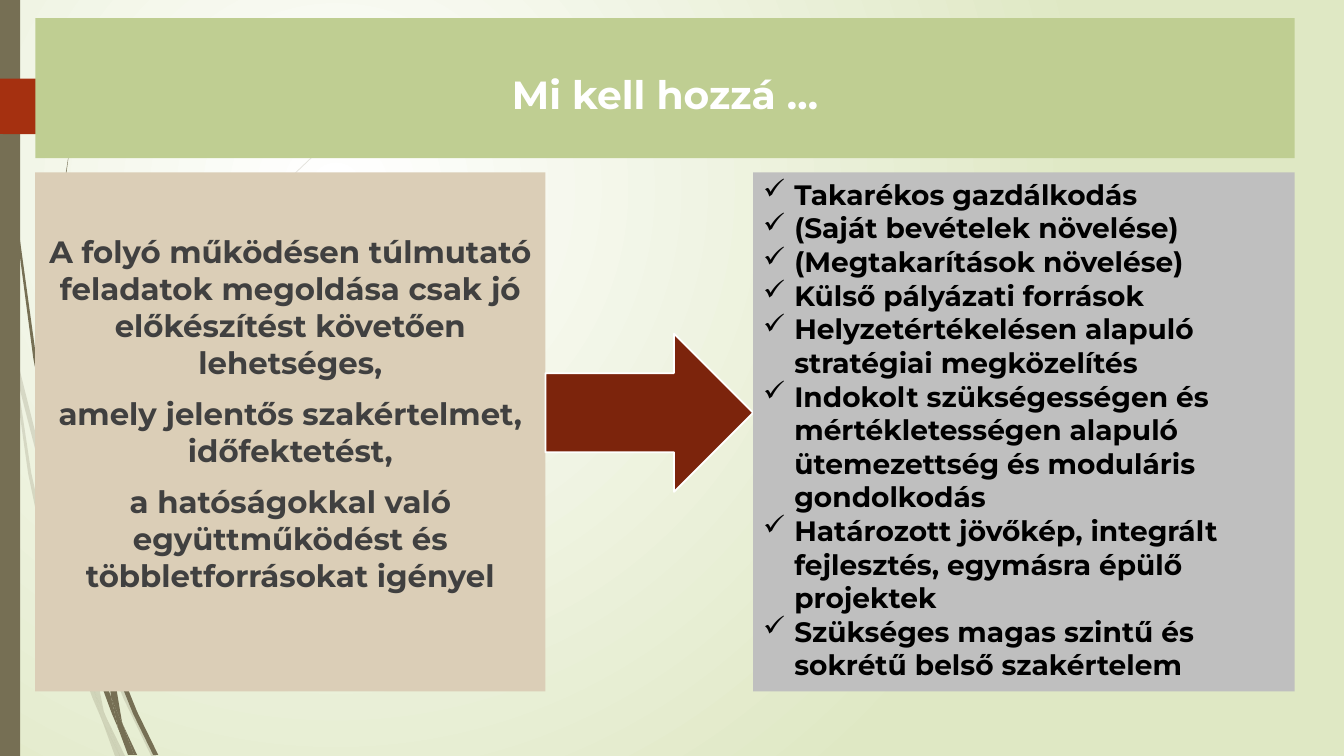
from lxml.etree import SubElement
from pptx import Presentation
from pptx.dml.color import RGBColor
from pptx.enum.shapes import MSO_SHAPE
from pptx.enum.text import MSO_ANCHOR, PP_ALIGN
from pptx.oxml.ns import qn
from pptx.util import Inches, Pt

WHITE = RGBColor(0xFF, 0xFF, 0xFF)
BLACK = RGBColor(0x00, 0x00, 0x00)
DARK = RGBColor(0x40, 0x40, 0x40)
MIST = RGBColor(0xDF, 0xE8, 0xC4)
GREEN = RGBColor(0xBF, 0xCE, 0x92)
SAND = RGBColor(0xDB, 0xCE, 0xB7)
GREY = RGBColor(0xBF, 0xBF, 0xBF)
OLIVE = RGBColor(0x76, 0x6F, 0x54)
RED = RGBColor(0xA5, 0x30, 0x10)
RUST = RGBColor(0x7C, 0x24, 0x0C)

FONT = "Montserrat"
UNIT = Inches(0.01)

PALE_BLADES = [
    [(11, 350), (9, 322), (0, 282), (0, 299), (10, 344)],
    [(58, 522), (84, 599), (85, 586), (62, 520), (37, 437), (14, 345), (17, 376), (36, 450)],
    [(92, 607), (88, 596), (88, 610), (123, 694), (150, 750), (155, 750), (127, 692)],
    [(119, 750), (124, 750), (105, 711)],
    [(93, 683), (70, 619), (48, 545), (31, 469), (17, 376), (11, 350), (28, 470),
     (44, 547), (65, 621), (92, 693), (101, 714), (99, 707)],
    [(84, 599), (87, 646), (93, 683), (96, 692), (105, 711), (103, 706), (91, 646), (88, 608)],
    [(88, 584), (97, 507), (110, 462), (132, 406), (160, 349), (193, 296), (229, 245),
     (268, 198), (290, 175), (312, 154), (312, 153), (289, 175), (268, 197), (228, 244),
     (191, 294), (158, 348), (130, 403), (107, 461), (91, 521), (85, 584), (88, 596)],
    [(101, 714), (114, 750), (119, 750)],
    [(96, 692), (93, 683), (99, 707), (101, 714), (119, 750), (105, 711)],
]
DARK_BLADES = [
    [(7, 110), (17, 233), (33, 355), (56, 477), (57, 481), (55, 453), (36, 355),
     (19, 232), (8, 109), (5, 48), (4, 0), (3, 0), (4, 48)],
    [(113, 649), (110, 641), (111, 656), (132, 708), (152, 749), (157, 749), (136, 706)],
    [(110, 691), (98, 657), (83, 607), (72, 556), (64, 505), (57, 477), (68, 557),
     (79, 608), (93, 659), (111, 708), (117, 722), (116, 717)],
    [(60, 472), (58, 453), (54, 349), (58, 245), (63, 193), (70, 141), (62, 193),
     (56, 245), (52, 349), (55, 449)],
    [(133, 749), (136, 749), (122, 719)],
    [(117, 722), (127, 749), (131, 749)],
    [(106, 645), (110, 691), (116, 706), (122, 719), (121, 716), (111, 656), (109, 651)],
    [(116, 706), (110, 691), (116, 717), (117, 722), (130, 749), (133, 749), (122, 719)],
]
TAG = [(173, 108), (148, 133), (146, 134), (136, 134), (0, 133), (0, 78), (136, 78),
       (146, 78), (148, 79), (173, 104), (174, 106)]

NEEDS = [
    "A folyó működésen túlmutató feladatok megoldása csak jó előkészítést követően lehetséges,",
    "amely jelentős szakértelmet, időfektetést,",
    "a hatóságokkal való együttműködést és többletforrásokat igényel",
]
MEANS = [
    "Takarékos gazdálkodás",
    "(Saját bevételek növelése)",
    "(Megtakarítások növelése)",
    "Külső pályázati források",
    "Helyzetértékelésen alapuló stratégiai megközelítés",
    "Indokolt szükségességen és mértékletességen alapuló ütemezettség és moduláris gondolkodás",
    "Határozott jövőkép, integrált fejlesztés, egymásra épülő projektek",
    "Szükséges magas szintű és sokrétű belső szakértelem",
]


def paint_back(slide):
    """Give the slide a round gradient with its centre at upper left."""
    fill = slide.background.fill
    fill.gradient()
    for stop, shade in zip(fill.gradient_stops, (WHITE, MIST)):
        stop.color.rgb = shade
    grad = slide.element.find(".//" + qn("a:gradFill"))
    for line in grad.findall(qn("a:lin")):
        grad.remove(line)
    ring = SubElement(grad, qn("a:path"), {"path": "circle"})
    SubElement(ring, qn("a:fillToRect"),
               {"l": "50000", "t": "50000", "r": "100000", "b": "100000"})


def style(shape, shade):
    """Fill a shape flat, with no line and no shadow."""
    shape.shadow.inherit = False
    shape.fill.solid()
    shape.fill.fore_color.rgb = shade
    shape.line.fill.background()
    return shape


def add_blade(slide, points, shade, alpha=100):
    """Draw a closed outline from points in hundredths of an inch."""
    pen = slide.shapes.build_freeform(*points[0], scale=UNIT)
    pen.add_line_segments(points[1:], close=True)
    shape = style(pen.convert_to_shape(), shade)
    if alpha < 100:
        tone = shape.fill._xPr.find(".//" + qn("a:srgbClr"))
        SubElement(tone, qn("a:alpha"), {"val": str(alpha * 1000)})


def add_block(slide, kind, box, shade):
    """Add a preset shape at left, top, width and height in inches."""
    return style(slide.shapes.add_shape(kind, *map(Inches, box)), shade)


def add_check(para):
    """Give a paragraph a hanging check mark."""
    props = para._p.get_or_add_pPr()
    props.set("marL", str(Inches(0.31)))
    props.set("indent", str(-Inches(0.31)))
    SubElement(props, qn("a:buChar"), {"char": "✓"})


def add_panel(slide, box, shade, lines, size, ink, inset, align, gap=0, checks=False):
    """Add a filled panel holding bold paragraphs."""
    frame = add_block(slide, MSO_SHAPE.RECTANGLE, box, shade).text_frame
    frame.word_wrap = True
    frame.vertical_anchor = MSO_ANCHOR.TOP
    frame.margin_top = Inches(inset)
    frame.text = "\n".join(lines)
    for rank, para in enumerate(frame.paragraphs):
        para.alignment = align
        para.space_before = Pt(gap if rank else 0)
        if checks:
            add_check(para)
        for run in para.runs:
            run.font.name = FONT
            run.font.size = Pt(size)
            run.font.bold = True
            run.font.color.rgb = ink


def main():
    """Build the slide and save it."""
    deck = Presentation()
    deck.slide_width, deck.slide_height = Inches(13.33), Inches(7.5)
    slide = deck.slides.add_slide(deck.slide_layouts[6])
    paint_back(slide)
    for points in PALE_BLADES:
        add_blade(slide, points, OLIVE, 20)
    for points in DARK_BLADES:
        add_blade(slide, points, OLIVE)
    add_block(slide, MSO_SHAPE.RECTANGLE, (0, 0, 0.2, 7.5), OLIVE)
    add_blade(slide, TAG, RED)
    add_panel(slide, (0.35, 0.18, 12.49, 1.39), GREEN, ["Mi kell hozzá …"],
              28, WHITE, 0.52, PP_ALIGN.CENTER)
    add_panel(slide, (0.35, 1.71, 5.06, 5.15), SAND, NEEDS,
              22, DARK, 0.6, PP_ALIGN.CENTER, gap=10)
    arrow = add_block(slide, MSO_SHAPE.RIGHT_ARROW, (5.41, 3.31, 2.06, 1.57), RUST)
    arrow.line.color.rgb = WHITE
    arrow.line.width = Pt(1.25)
    add_panel(slide, (7.47, 1.71, 5.37, 5.15), GREY, MEANS,
              20, BLACK, 0.05, PP_ALIGN.LEFT, checks=True)
    deck.save("out.pptx")


if __name__ == "__main__":
    main()
